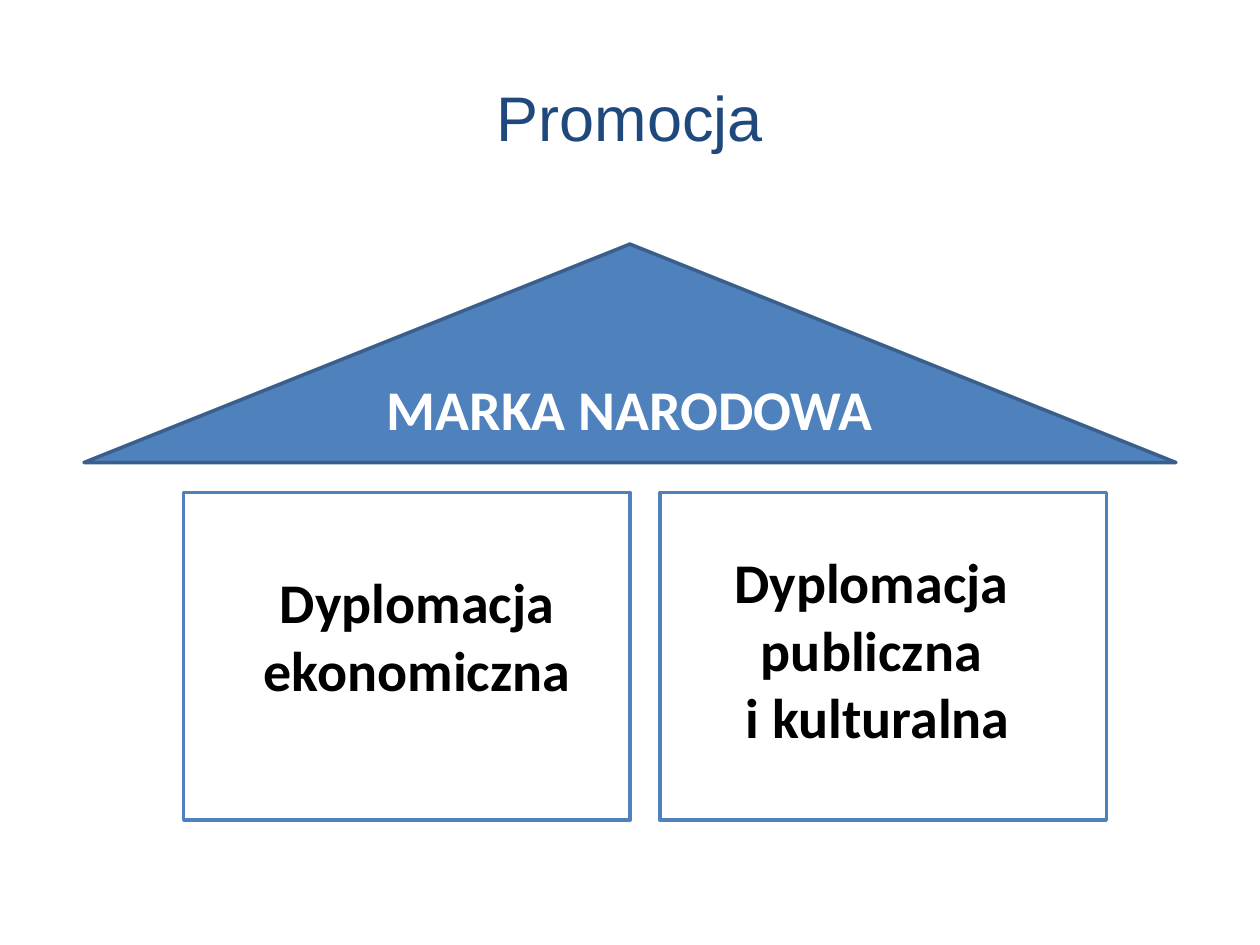
"""Build the slide that shows promotion as a house: a roof on two pillars."""
from dataclasses import dataclass

import pptx
import pptx.dml.color
import pptx.enum.shapes
import pptx.enum.text
import pptx.util

Pt = pptx.util.Pt
Shape = pptx.enum.shapes.MSO_SHAPE
Anchor = pptx.enum.text.MSO_ANCHOR


@dataclass(frozen=True)
class Theme:
    title_color: str = "1F497D"
    roof_fill: str = "4F81BD"
    roof_line: str = "3A5F8C"
    pillar_fill: str = "FFFFFF"
    pillar_line: str = "4F81BD"
    roof_text: str = "FFFFFF"
    pillar_text: str = "000000"
    title_font: str = "Arial"
    label_font: str = "Calibri"
    title_size: int = 36
    label_size: int = 32
    line_width: int = 2


class SlideBuilder:
    def __init__(self, page, theme):
        self.page = page
        self.theme = theme

    def color(self, value):
        return pptx.dml.color.RGBColor.from_string(value)

    def set_text(self, frame, text, font, size, color, bold):
        frame.word_wrap = True
        para = frame.paragraphs[0]
        para.text = text
        para.alignment = pptx.enum.text.PP_ALIGN.CENTER
        para.font.name = font
        para.font.size = Pt(size)
        para.font.bold = bold
        para.font.color.rgb = self.color(color)

    def set_label(self, frame, text, color):
        self.set_text(frame, text, self.theme.label_font, self.theme.label_size, color, True)

    def title(self, text, left, top, width, height):
        box = self.page.shapes.title
        box.left, box.top, box.width, box.height = map(Pt, (left, top, width, height))
        box.text_frame.vertical_anchor = Anchor.MIDDLE
        self.set_text(box.text_frame, text, self.theme.title_font,
                      self.theme.title_size, self.theme.title_color, False)

    def shape(self, kind, place, fill, line):
        shape = self.page.shapes.add_shape(kind, *map(Pt, place))
        shape.shadow.inherit = False
        shape.fill.solid()
        shape.fill.fore_color.rgb = self.color(fill)
        shape.line.color.rgb = self.color(line)
        shape.line.width = Pt(self.theme.line_width)
        return shape

    def roof(self, text, *place):
        roof = self.shape(Shape.ISOSCELES_TRIANGLE, place,
                          self.theme.roof_fill, self.theme.roof_line)
        roof.text_frame.vertical_anchor = Anchor.MIDDLE
        self.set_label(roof.text_frame, text, self.theme.roof_text)

    def pillar(self, *place):
        self.shape(Shape.RECTANGLE, place, self.theme.pillar_fill, self.theme.pillar_line)

    def label(self, text, *place):
        box = self.page.shapes.add_textbox(*map(Pt, place))
        self.set_label(box.text_frame, text, self.theme.pillar_text)


def main():
    deck = pptx.Presentation()
    deck.slide_width, deck.slide_height = Pt(720), Pt(540)
    page = deck.slides.add_slide(deck.slide_layouts.get_by_name("Title Only"))
    builder = SlideBuilder(page, Theme())

    builder.title("Promocja", 36, 21.6, 648, 90)
    builder.roof("MARKA NARODOWA", 48, 139.5, 624, 124.8)

    pillar_left, pillar_width, gap = 105, 255, 17.2
    for column in range(2):
        builder.pillar(pillar_left + column * (pillar_width + gap), 281.5, pillar_width, 187.2)

    builder.label("Dyplomacja ekonomiczna", 139, 321, 198.7, 124)
    builder.label("Dyplomacja \npubliczna \ni kulturalna", 377.2, 309.6, 249, 162.7)

    deck.save("out.pptx")


if __name__ == "__main__":
    main()
